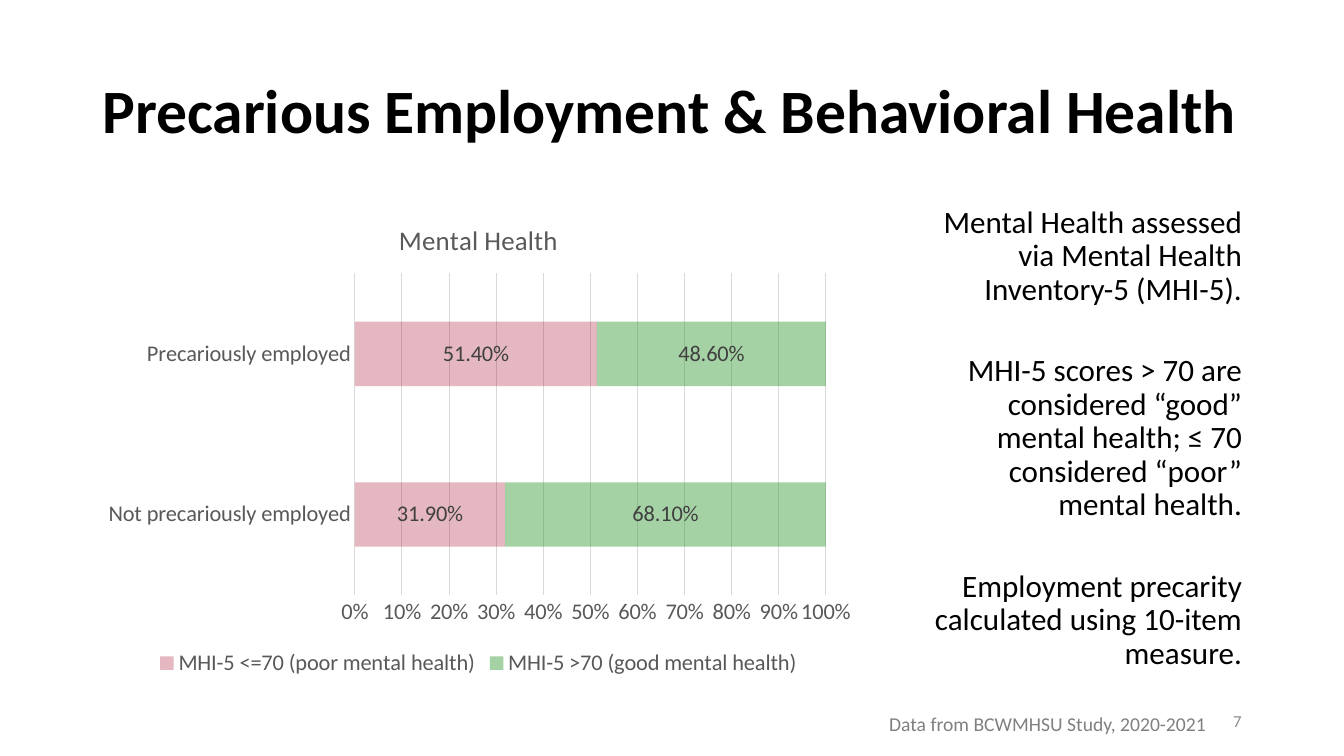
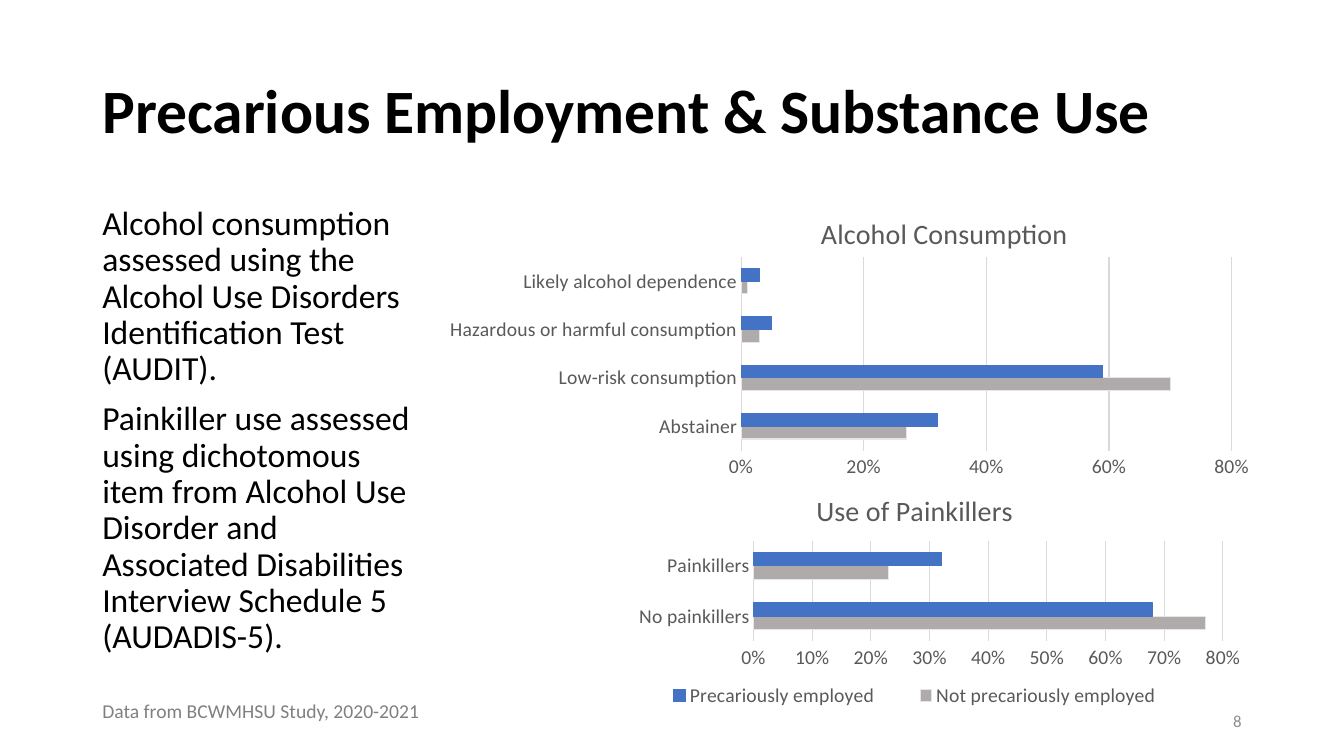
from pptx import Presentation
from pptx.chart.data import CategoryChartData
from pptx.dml.color import RGBColor
from pptx.enum.chart import (XL_CHART_TYPE, XL_LABEL_POSITION,
                             XL_LEGEND_POSITION, XL_TICK_MARK)
from pptx.enum.text import MSO_ANCHOR, PP_ALIGN
from pptx.oxml import parse_xml
from pptx.oxml.ns import nsdecls, qn
from pptx.util import Pt

STACKED, CLUSTERED = XL_CHART_TYPE.BAR_STACKED, XL_CHART_TYPE.BAR_CLUSTERED
LEFT, RIGHT = PP_ALIGN.LEFT, PP_ALIGN.RIGHT
TOP, MIDDLE = MSO_ANCHOR.TOP, MSO_ANCHOR.MIDDLE
NO_TICK = XL_TICK_MARK.NONE

FONT = "Calibri"
BLACK = RGBColor(0x00, 0x00, 0x00)
LABEL_DARK = RGBColor(0x40, 0x40, 0x40)
CHART_TEXT = RGBColor(0x59, 0x59, 0x59)
SOURCE_GREY = RGBColor(0x80, 0x80, 0x80)
NUMBER_GREY = RGBColor(0x8C, 0x8C, 0x8C)
GRID = RGBColor(0xD9, 0xD9, 0xD9)
POOR_RED = RGBColor(0xA5, 0x00, 0x21)
GOOD_GREEN = RGBColor(0x33, 0x99, 0x33)
BLUE = RGBColor(0x44, 0x72, 0xC4)
GREY = RGBColor(0xAF, 0xAB, 0xAB)
PALE_GREY = RGBColor(0xE7, 0xE6, 0xE6)

TITLE_BOX = (66, 28.8, 828, 104.4)
NUMBER_BOX = (678, 500.4, 216, 28.8)
SOURCE = "Data from BCWMHSU Study, 2020-2021"
NOT_PRECARIOUS = dict(name="Not precariously employed", color=GREY, line=PALE_GREY)
PRECARIOUS = dict(name="Precariously employed", color=BLUE, line=BLUE)

SLIDES = [
    dict(
        title="Precarious Employment & Behavioral Health",
        number="7",
        source_box=(628, 504.7, 242.6, 24.5),
        body=[
            "Mental Health assessed via Mental Health Inventory-5 (MHI-5).",
            "MHI-5 scores > 70 are considered “good” mental health; "
            "≤ 70 considered “poor” mental health.",
            "Employment precarity calculated using 10-item measure.",
        ],
        body_box=(617.8, 144, 276.5, 342.7),
        body_format=dict(size=22.2, align=RIGHT, gap=34, margin_left=43.2),
        charts=[dict(
            kind=STACKED, box=(66, 144, 551.5, 342.7), size=16,
            title="Mental Health", title_size=19.2,
            cats=["Not precariously employed", "Precariously employed"],
            series=[
                dict(name="MHI-5 <=70 (poor mental health)",
                     vals=[0.319, 0.514], color=POOR_RED, alpha=28),
                dict(name="MHI-5 >70 (good mental health)",
                     vals=[0.681, 0.486], color=GOOD_GREEN, alpha=44),
            ],
            gap=150, maximum=1, step=0.1, labels=True, legend=True,
            layout={"plotArea": (0.34, 0.15, 0.61, 0.67)},
        )],
    ),
    dict(
        title="Precarious Employment & Substance Use",
        number="8",
        source_box=(66, 496, 242.6, 24.5),
        body=[
            "Alcohol consumption assessed using the Alcohol Use Disorders "
            "Identification Test (AUDIT).",
            "Painkiller use assessed using dichotomous item from Alcohol Use "
            "Disorder and Associated Disabilities Interview Schedule 5 (AUDADIS-5).",
        ],
        body_box=(66, 144, 243.4, 342.7),
        body_format=dict(size=24, align=LEFT, gap=10),
        charts=[
            dict(
                kind=CLUSTERED, box=(309.6, 134, 594, 216), size=14,
                title="Alcohol Consumption", title_size=20,
                cats=["Abstainer", "Low-risk consumption",
                      "Hazardous or harmful consumption",
                      "Likely alcohol dependence"],
                series=[dict(NOT_PRECARIOUS, vals=[0.27, 0.7, 0.03, 0.01]),
                        dict(PRECARIOUS, vals=[0.32, 0.59, 0.05, 0.03])],
                gap=182, maximum=0.8, step=0.2,
                layout={"plotArea": (0.37, 0.23, 0.59, 0.64),
                        "title": (0.46, 0.07)},
            ),
            dict(
                kind=CLUSTERED, box=(403.2, 340, 500.4, 171.4), size=14,
                title="Use of Painkillers", title_size=20,
                cats=["No painkillers", "Painkillers"],
                series=[dict(NOT_PRECARIOUS, vals=[0.77, 0.23]),
                        dict(PRECARIOUS, vals=[0.68, 0.32])],
                gap=182, maximum=0.8, step=0.1, legend=True,
                layout={"plotArea": (0.27, 0.27, 0.67, 0.42),
                        "legend": (0.1, 0.86, 0.8, 0.11)},
            ),
        ],
    ),
]


def set_font(font, size, color=CHART_TEXT, bold=False):
    for name, value in dict(name=FONT, size=Pt(size), bold=bold).items():
        setattr(font, name, value)
    font.color.rgb = color


def add_text(s, box, paragraphs, size, color=BLACK, bold=False, align=LEFT,
             anchor=TOP, spacing=None, gap=0, wrap=True, margin_left=7.2):
    tf = s.shapes.add_textbox(*map(Pt, box)).text_frame
    frame = dict(word_wrap=wrap, vertical_anchor=anchor, margin_left=Pt(margin_left))
    for name, value in frame.items():
        setattr(tf, name, value)
    for i, text in enumerate(paragraphs):
        p = tf.paragraphs[0] if i == 0 else tf.add_paragraph()
        p.alignment = align
        p.line_spacing = spacing
        p.space_before = Pt(gap if i else 0)
        r = p.add_run()
        r.text = text
        set_font(r.font, size, color, bold)


def set_layout(part, box):
    """Place a chart part by fractions of the chart: x, y and optionally w, h."""
    layout = part.find(qn("c:layout"))
    index = 0 if part.tag == qn("c:plotArea") else 1
    if layout is not None:
        index = part.index(layout)
        part.remove(layout)
    target = '<c:layoutTarget val="inner"/>' if part.tag == qn("c:plotArea") else ""
    modes = '<c:xMode val="edge"/><c:yMode val="edge"/>'
    sides = "".join(f'<c:{k} val="{v}"/>' for k, v in zip("xywh", box))
    part.insert(index, parse_xml(
        f'<c:layout {nsdecls("c")}><c:manualLayout>{target}{modes}{sides}'
        "</c:manualLayout></c:layout>"))


def format_axes(chart, size, maximum, step):
    cat, val = chart.category_axis, chart.value_axis
    for axis in (cat, val):
        axis.major_tick_mark = axis.minor_tick_mark = NO_TICK
        set_font(axis.tick_labels.font, size)
    val.minimum_scale, val.maximum_scale, val.major_unit = 0, maximum, step
    val.has_major_gridlines = True
    val.tick_labels.number_format = "0%"
    val.tick_labels.number_format_is_linked = False
    val.format.line.fill.background()
    for line in (cat.format.line, val.major_gridlines.format.line):
        line.color.rgb = GRID
        line.width = Pt(0.75)


def format_series(chart, specs):
    elements = chart.element.xpath(".//c:ser")
    for series, element, item in zip(chart.plots[0].series, elements, specs):
        series.invert_if_negative = False
        series.format.fill.solid()
        series.format.fill.fore_color.rgb = item["color"]
        if "alpha" in item:
            color = element.xpath("c:spPr/a:solidFill/a:srgbClr")[0]
            color.append(parse_xml(
                f'<a:alpha {nsdecls("a")} val="{item["alpha"] * 1000}"/>'))
        if "line" in item:
            series.format.line.color.rgb = item["line"]
            series.format.line.width = Pt(0.75)


def add_bar_chart(s, kind, box, size, title, title_size, cats, series, gap,
                  maximum, step, layout, labels=False, legend=False):
    data = CategoryChartData(number_format="0.00%")
    data.categories = cats
    for item in series:
        data.add_series(item["name"], item["vals"])
    chart = s.shapes.add_chart(kind, *map(Pt, box), data).chart
    set_font(chart.font, size, BLACK)
    plot = chart.plots[0]
    plot.vary_by_categories = False
    plot.gap_width = gap
    format_axes(chart, size, maximum, step)
    format_series(chart, series)

    chart.has_title = True
    tf = chart.chart_title.text_frame
    tf.text = title
    set_font(tf.paragraphs[0].runs[0].font, title_size)
    chart.chart_title.include_in_layout = False
    chart.has_legend = legend
    if legend:
        chart.legend.position = XL_LEGEND_POSITION.BOTTOM
        chart.legend.include_in_layout = False
        set_font(chart.legend.font, size)
    if labels:
        plot.has_data_labels = True
        values = dict(show_value=True, position=XL_LABEL_POSITION.CENTER,
                      number_format="0.00%", number_format_is_linked=False)
        for name, value in values.items():
            setattr(plot.data_labels, name, value)
        set_font(plot.data_labels.font, size, LABEL_DARK)
    for part, place in layout.items():
        set_layout(chart.element.xpath(f"c:chart/c:{part}")[0], place)


def add_slide(prs, content):
    s = prs.slides.add_slide(prs.slide_layouts[6])
    add_text(s, TITLE_BOX, [content["title"]], 44, bold=True,
             anchor=MIDDLE, spacing=0.9)
    add_text(s, content["body_box"], content["body"], spacing=0.9,
             **content["body_format"])
    for chart in content["charts"]:
        add_bar_chart(s, **chart)
    add_text(s, NUMBER_BOX, [content["number"]], 12, NUMBER_GREY,
             align=RIGHT, anchor=MIDDLE)
    add_text(s, content["source_box"], [SOURCE], 14, SOURCE_GREY, wrap=False)


def main():
    prs = Presentation()
    prs.slide_width, prs.slide_height = Pt(960), Pt(540)
    for content in SLIDES:
        add_slide(prs, content)
    prs.save("out.pptx")


if __name__ == "__main__":
    main()
